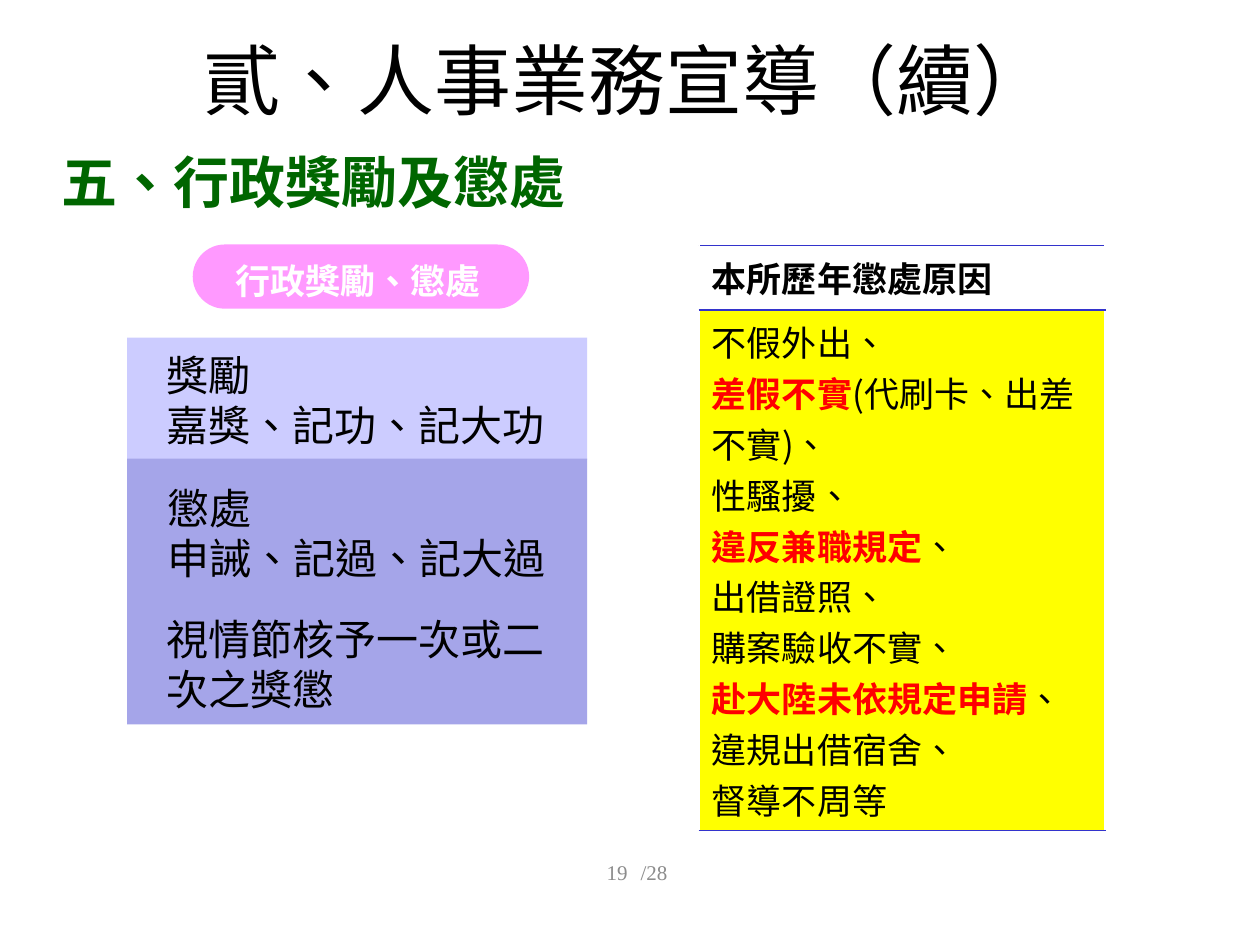
import pptx
import pptx.util
import pptx.dml.color
import pptx.enum.shapes
import pptx.enum.text
import pptx.oxml
import pptx.oxml.ns

Inches, Pt = pptx.util.Inches, pptx.util.Pt
ALIGN = pptx.enum.text.PP_ALIGN
ANCHOR = pptx.enum.text.MSO_ANCHOR
SHAPE = pptx.enum.shapes.MSO_SHAPE

# Content
CJK, ROMAN = "Noto Sans CJK SC", "Times New Roman"
BLACK, WHITE, RED, GREEN, GREY = "000000", "FFFFFF", "FF0000", "006600", "8C8C8C"
BORDER = "3333CC"

BODY = {"size": 24, "name": CJK, "color": BLACK}
CELL = {"size": 20, "name": CJK, "color": BLACK, "bold": False}
PAGE = {"size": 12, "name": ROMAN, "color": GREY}
HOT = {"color": RED, "bold": True}

# Panels: shape, left, top, width, height, fill
PANELS = [
    (SHAPE.ROUNDED_RECTANGLE, 1.53, 1.94, 2.67, 0.51, "FF99FF"),
    (SHAPE.RECTANGLE, 1.01, 2.68, 3.65, 0.97, "CCCCFF"),
    (SHAPE.RECTANGLE, 1.01, 3.64, 3.65, 2.11, "A5A5E9"),
]

# Texts: place, paragraphs, font, layout
SNUG = {"line_spacing": Pt(28.6)}
MIDDLE = {"anchor": ANCHOR.MIDDLE}
TEXTS = [
    ((1.76, 2.01, 2.17, 0.44), ["行政獎勵、懲處"],
     {"size": 20, "name": CJK, "color": WHITE, "bold": True},
     {"alignment": ALIGN.CENTER, "wrap": False}),
    ((1.22, 2.73, 3.23, 0.91), ["獎勵", "嘉獎、記功、記大功"], BODY,
     {**SNUG, "wrap": False}),
    ((1.23, 3.78, 3.23, 0.91), ["懲處", "申誡、記過、記大過"], BODY,
     {**SNUG, "wrap": False}),
    ((1.22, 4.82, 3.23, 0.91), ["視情節核予一次或二次之獎懲"], BODY, SNUG),
    ((0.73, 0, 8.5, 1.25), ["貳、人事業務宣導（續）"],
     {"size": 44, "name": CJK, "color": BLACK},
     {**MIDDLE, "alignment": ALIGN.CENTER}),
    ((0.39, 1.04, 8.82, 0.55), ["五、行政獎勵及懲處"],
     {"size": 32, "name": CJK, "color": GREEN, "bold": True},
     {"line_spacing": 1.15}),
    ((2.83, 6.72, 2.25, 0.4), ["19"], PAGE, {**MIDDLE, "alignment": ALIGN.RIGHT}),
    ((3.5, 6.72, 3.38, 0.4), ["/28"], PAGE, {**MIDDLE, "alignment": ALIGN.CENTER}),
]

# Table rows: height, fill, paragraphs of (text, font changes) runs
TABLE_LEFT, TABLE_TOP, TABLE_WIDTH = 5.55, 1.95, 3.22
ROWS = [
    (0.51, WHITE, [[("本所歷年懲處原因", {"bold": True})]]),
    (4.13, "FFFF00", [
        [("不假外出、", {})],
        [("差假不實", HOT), ("(代刷卡、出差不實)、", {})],
        [("性騷擾、", {})],
        [("違反兼職規定", HOT), ("、", {})],
        [("出借證照、", {})],
        [("購案驗收不實、", {})],
        [("赴大陸未依規定申請", HOT), ("、違規出借宿舍、", {})],
        [("督導不周等", {})],
    ]),
]


def rgb(color):
    return pptx.dml.color.RGBColor.from_string(color)


def paint(fill, color):
    fill.solid()
    fill.fore_color.rgb = rgb(color)


def add_run(paragraph, text, style):
    run = paragraph.add_run()
    run.text = text
    for key, value in style.items():
        if key == "color":
            run.font.color.rgb = rgb(value)
        else:
            setattr(run.font, key, Pt(value) if key == "size" else value)
    # Traditional Chinese centres its punctuation and needs its own typeface
    properties = run.font._element
    properties.set("lang", "zh-TW")
    east_asian = pptx.oxml.parse_xml(
        f'<a:ea {pptx.oxml.ns.nsdecls("a")} typeface="{CJK}"/>')
    properties.find(pptx.oxml.ns.qn("a:latin")).addnext(east_asian)


def write(frame, paragraphs, style, layout):
    for index, runs in enumerate(paragraphs):
        paragraph = frame.paragraphs[0] if index == 0 else frame.add_paragraph()
        for key in ("alignment", "line_spacing"):
            if key in layout:
                setattr(paragraph, key, layout[key])
        for text, changes in runs:
            add_run(paragraph, text, {**style, **changes})


def add_border(cell, side):
    line = pptx.oxml.parse_xml(
        f'<a:{side} {pptx.oxml.ns.nsdecls("a")} w="12700"><a:solidFill>'
        f'<a:srgbClr val="{BORDER}"/></a:solidFill></a:{side}>')
    properties = cell._tc.get_or_add_tcPr()
    fill = properties.find(pptx.oxml.ns.qn("a:solidFill"))
    fill.addprevious(line)


presentation = pptx.Presentation()
presentation.slide_width, presentation.slide_height = Inches(10), Inches(7.5)
slide = presentation.slides.add_slide(presentation.slide_layouts[6])

# Coloured panels
for kind, *place, color in PANELS:
    shape = slide.shapes.add_shape(kind, *map(Inches, place))
    shape.shadow.inherit = False
    shape.line.fill.background()
    paint(shape.fill, color)
    if kind == SHAPE.ROUNDED_RECTANGLE:
        shape.adjustments[0] = 0.5

# Text boxes
for place, lines, style, layout in TEXTS:
    frame = slide.shapes.add_textbox(*map(Inches, place)).text_frame
    frame.word_wrap = layout.get("wrap", True)
    frame.vertical_anchor = layout.get("anchor", ANCHOR.TOP)
    write(frame, [[(line, {})] for line in lines], style, layout)

# Table of reasons
table_height = sum(height for height, _, _ in ROWS)
table_place = (TABLE_LEFT, TABLE_TOP, TABLE_WIDTH, table_height)
table = slide.shapes.add_table(len(ROWS), 1, *map(Inches, table_place)).table
for index, (height, color, paragraphs) in enumerate(ROWS):
    table.rows[index].height = Inches(height)
    cell = table.cell(index, 0)
    paint(cell.fill, color)
    for side in ("lnT", "lnB"):
        add_border(cell, side)
    write(cell.text_frame, paragraphs, CELL, {})

presentation.save("out.pptx")
